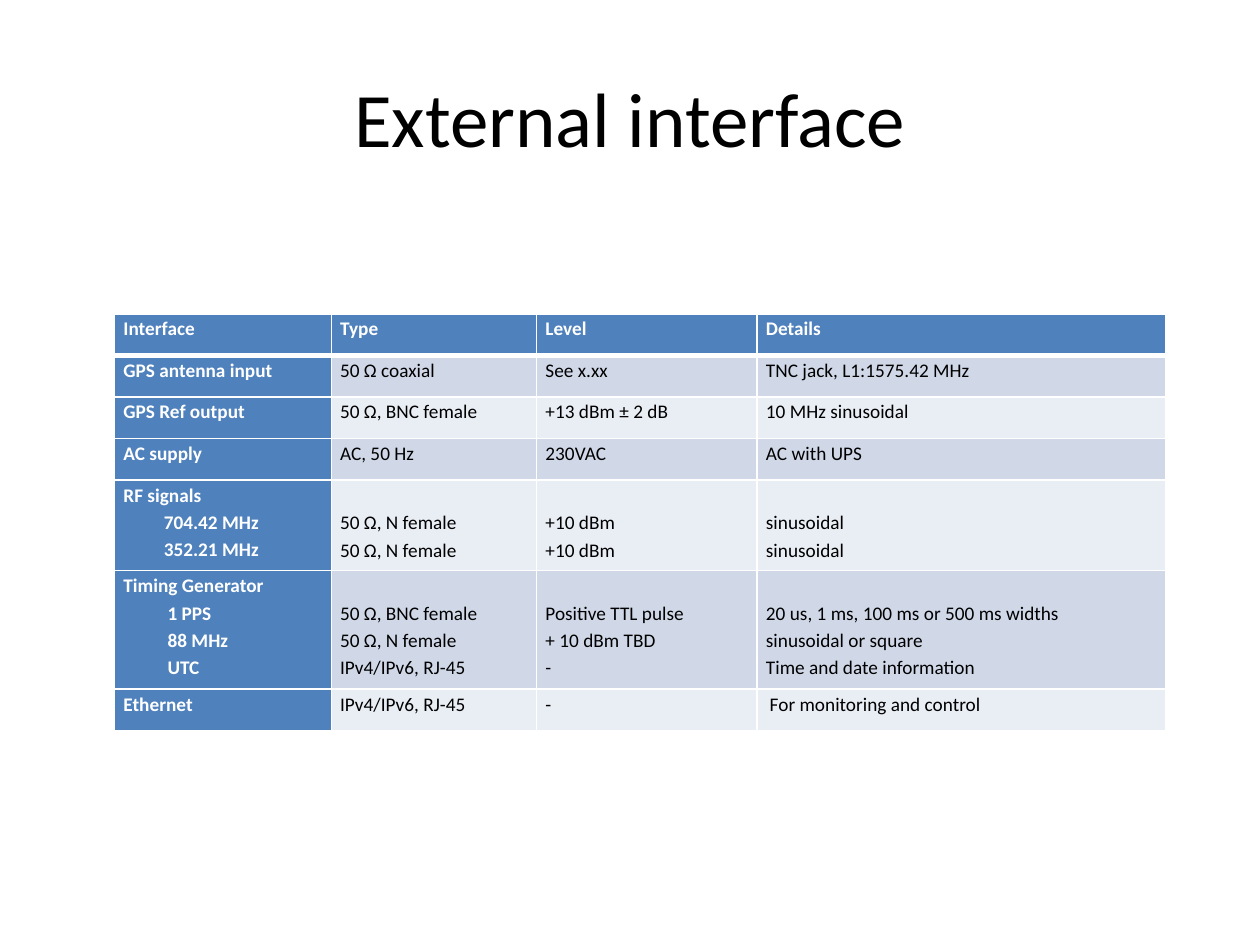
"""Build the External interface slide with its table of signals."""
from lxml.etree import SubElement
from pptx import Presentation
from pptx.dml.color import RGBColor
from pptx.enum.text import MSO_ANCHOR, PP_ALIGN
from pptx.oxml.ns import qn
from pptx.util import Inches, Pt

TITLE = "External interface"
HEADINGS = ["Interface", "Type", "Level", "Details"]
INTERFACES = [
    ["GPS antenna input", "50 Ω coaxial", "See x.xx", "TNC jack, L1:1575.42 MHz"],
    ["GPS Ref output", "50 Ω, BNC female", "+13 dBm ± 2 dB", "10 MHz sinusoidal"],
    ["AC supply", "AC, 50 Hz", "230VAC", "AC with UPS"],
    ["RF signals\n704.42 MHz\n352.21 MHz", "50 Ω, N female\n50 Ω, N female",
     "+10 dBm\n+10 dBm", "sinusoidal\nsinusoidal"],
    ["Timing Generator\n1 PPS\n88 MHz\nUTC",
     "50 Ω, BNC female\n50 Ω, N female\nIPv4/IPv6, RJ-45",
     "Positive TTL pulse\n+ 10 dBm TBD\n-",
     "20 us, 1 ms, 100 ms or 500 ms widths\nsinusoidal or square\nTime and date information"],
    ["Ethernet", "IPv4/IPv6, RJ-45", "-", "For monitoring and control"],
]
COLUMN_WIDTHS = [1.72, 1.63, 1.75, 3.24]
ROW_HEIGHTS = [0.33, 0.33, 0.33, 0.33, 0.72, 0.94, 0.33]
SIGNAL_INDENTS = {4: 0.32, 5: 0.35}
DETAIL_INDENTS = {6: 0.03}
LINE_PITCH = 0.22
COLORS = {"accent": "4F81BD", "odd": "D0D8E8", "even": "E9EDF4",
          "light": "FFFFFF", "dark": "000000"}
CELL_MARGINS = {"margin_left": 0.07, "margin_right": 0.07, "margin_top": 0, "margin_bottom": 0}


def style_font(font, size, color, bold=False):
    formats = {"name": "Calibri", "size": Pt(size), "bold": bold}
    for attribute, value in formats.items():
        setattr(font, attribute, value)
    font.color.rgb = RGBColor.from_string(COLORS[color])


def add_borders(cell, row):
    properties = cell._tc.get_or_add_tcPr()
    heavy_side = {0: "lnB", 1: "lnT"}.get(row)
    for position, side in enumerate(("lnL", "lnR", "lnT", "lnB")):
        width = Pt(3 if side == heavy_side else 1)
        line = SubElement(properties, qn(f"a:{side}"), w=str(width))
        fill = SubElement(line, qn("a:solidFill"))
        SubElement(fill, qn("a:srgbClr"), val=COLORS["light"])
        properties.insert(position, line)


def fill_cell(cell, text, row, column):
    heading = row == 0 or column == 0
    for attribute, value in CELL_MARGINS.items():
        setattr(cell, attribute, Inches(value))
    if row in SIGNAL_INDENTS and column > 0:
        cell.margin_top = Inches(LINE_PITCH)
    cell.text = text
    for index, paragraph in enumerate(cell.text_frame.paragraphs):
        paragraph.line_spacing = 1.15
        style_font(paragraph.runs[0].font, 11, "light" if heading else "dark", heading)
        indent = DETAIL_INDENTS.get(row, 0) if column == 3 else 0
        if column == 0 and index > 0:
            indent = SIGNAL_INDENTS[row]
        if indent:
            paragraph._p.get_or_add_pPr().set("marL", str(Inches(indent)))
    fill = "accent" if heading else "odd" if row % 2 else "even"
    cell.fill.solid()
    cell.fill.fore_color.rgb = RGBColor.from_string(COLORS[fill])
    add_borders(cell, row)


def main():
    deck = Presentation()
    deck.slide_width, deck.slide_height = Inches(10), Inches(7.5)
    slide = deck.slides.add_slide(deck.slide_layouts[6])

    title = slide.shapes.add_textbox(Inches(0.5), Inches(0.3), Inches(9), Inches(1.25)).text_frame
    title.word_wrap = True
    title.vertical_anchor = MSO_ANCHOR.MIDDLE
    title.text = TITLE
    title.paragraphs[0].alignment = PP_ALIGN.CENTER
    style_font(title.paragraphs[0].runs[0].font, 44, "dark")

    rows = [HEADINGS, *INTERFACES]
    table = slide.shapes.add_table(
        len(rows), len(HEADINGS), Inches(0.91), Inches(2.49),
        Inches(sum(COLUMN_WIDTHS)), Inches(sum(ROW_HEIGHTS))).table
    for column, width in zip(table.columns, COLUMN_WIDTHS):
        column.width = Inches(width)
    for row, (height, texts) in enumerate(zip(ROW_HEIGHTS, rows)):
        table.rows[row].height = Inches(height)
        for column, text in enumerate(texts):
            fill_cell(table.cell(row, column), text, row, column)

    deck.save("out.pptx")


if __name__ == "__main__":
    main()
